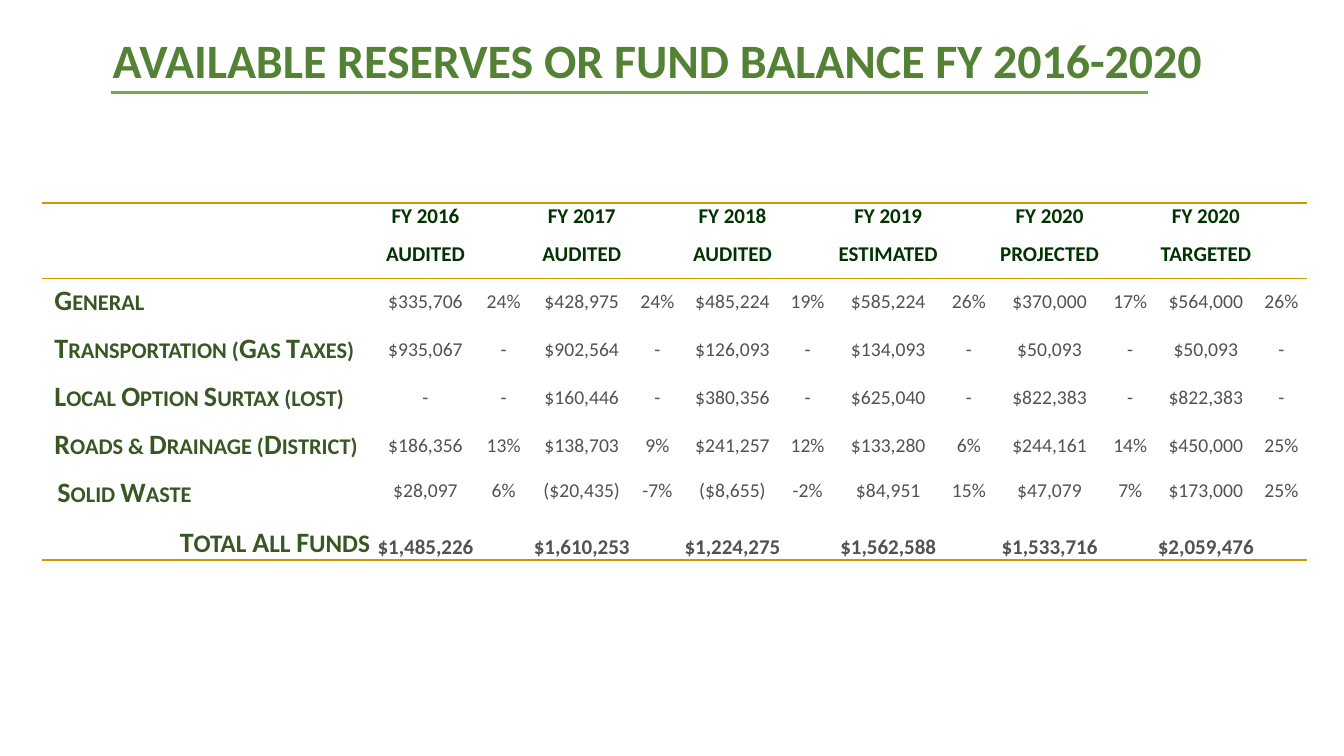
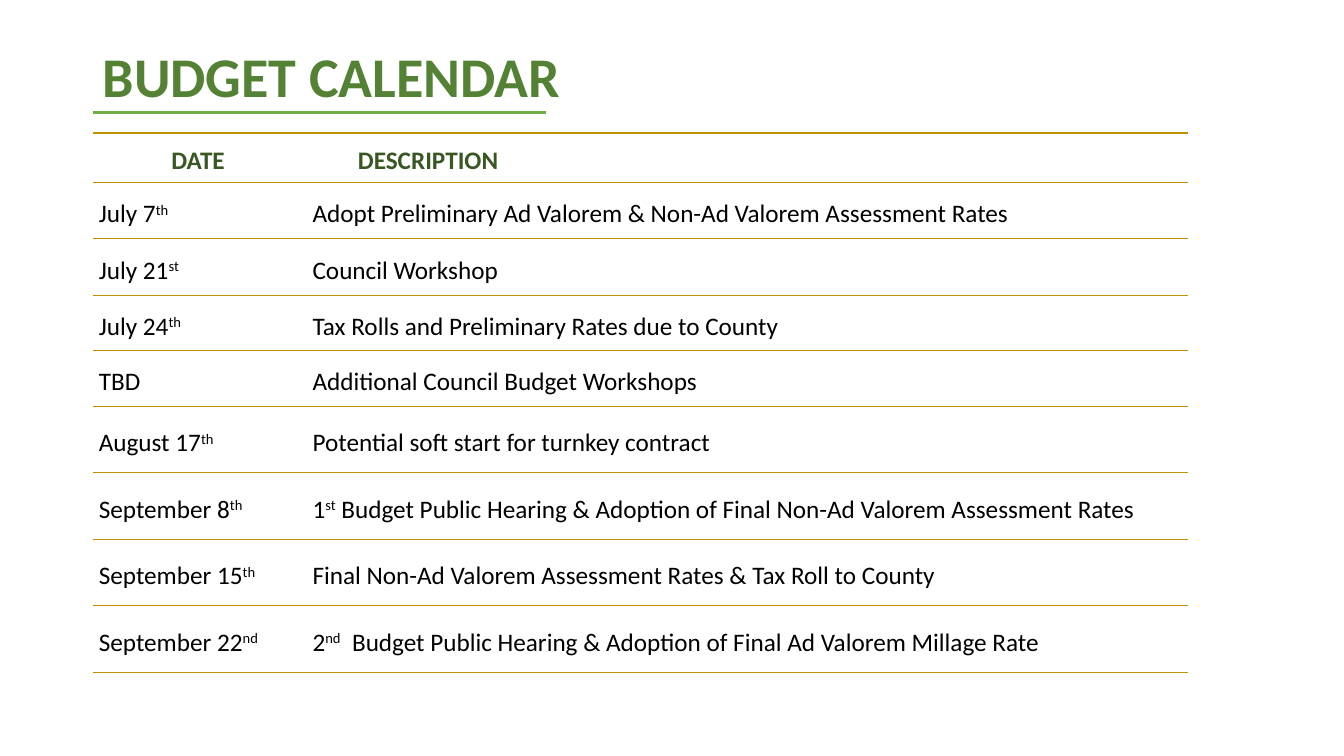
from dataclasses import dataclass
from itertools import groupby

from lxml import etree
from pptx import Presentation
from pptx.dml import color
from pptx.enum import shapes, text
from pptx.oxml import ns
from pptx.util import Inches, Pt


@dataclass(frozen=True)
class Theme:
    """Colours, type sizes and line widths of the deck."""
    font: str = "Calibri"
    title: str = "548235"
    rule: str = "70AD47"
    head: str = "003300"
    label: str = "385723"
    value: str = "525252"
    body: str = "000000"
    paper: str = "FFFFFF"
    gold: str = "CC9900"
    amber: str = "C09101"
    cap: float = 20
    mid: float = 18
    small: float = 16
    sub: float = 15
    cell: float = 14
    thick: float = 1.5
    thin: float = 1
    rule_w: float = 2


T = Theme()
LEFT, MID, RIGHT = text.PP_ALIGN.LEFT, text.PP_ALIGN.CENTER, text.PP_ALIGN.RIGHT
CENTER, BOTTOM = text.MSO_ANCHOR.MIDDLE, text.MSO_ANCHOR.BOTTOM
PLAIN = "{2D5ABB26-0587-4C30-8999-92F81FD0307C}"
TIGHT = (0.01, 0.01, 0.01, 0)

YEARS = ["FY 2016", "FY 2017", "FY 2018", "FY 2019", "FY 2020", "FY 2020"]
STAGES = ["AUDITED", "AUDITED", "AUDITED", "ESTIMATED", "PROJECTED", "TARGETED"]
FUNDS = [
    ("General", "$335,706 24% $428,975 24% $485,224 19% $585,224 26% $370,000 17% $564,000 26%"),
    ("Transportation (Gas Taxes)", "$935,067 - $902,564 - $126,093 - $134,093 - $50,093 - $50,093 -"),
    ("Local Option Surtax (lost)", "- - $160,446 - $380,356 - $625,040 - $822,383 - $822,383 -"),
    ("Roads & Drainage (District)", "$186,356 13% $138,703 9% $241,257 12% $133,280 6% $244,161 14% $450,000 25%"),
    ("Solid Waste", "$28,097 6% ($20,435) -7% ($8,655) -2% $84,951 15% $47,079 7% $173,000 25%"),
]
TOTALS = ["$1,485,226", "$1,610,253", "$1,224,275", "$1,562,588", "$1,533,716", "$2,059,476"]
FUND_COLS = [3.3, 1, 0.55, 1, 0.5, 0.99, 0.5, 1.1, 0.5, 1.1, 0.5, 1, 0.5]
FUND_ROWS = [0.26, 0.49, 0.46, 0.49, 0.46, 0.49, 0.4, 0.5]

DATES = [
    ("July 7^th", "Adopt Preliminary Ad Valorem & Non-Ad Valorem Assessment Rates"),
    ("July 21^st", "Council Workshop"),
    ("July 24^th", "Tax Rolls and Preliminary Rates due to County"),
    ("TBD", "Additional Council Budget Workshops"),
    ("August 17^th", "Potential soft start for turnkey contract"),
    ("September 8^th", "1^st^ Budget Public Hearing & Adoption of Final Non-Ad Valorem Assessment Rates"),
    ("September 15^th", "Final Non-Ad Valorem Assessment Rates & Tax Roll to County"),
    ("September 22^nd", "2^nd^  Budget Public Hearing & Adoption of Final Ad Valorem Millage Rate"),
]
DATE_COLS = [2.18, 8.68]
DATE_ROWS = [0.49, 0.56, 0.56, 0.55, 0.55] + [0.66] * 4


def ink(run, size, tint, bold=False):
    """Set the font, size, colour and weight of a run."""
    font = run.font
    font.name, font.size, font.bold = T.font, Pt(size), bold
    font.color.rgb = color.RGBColor.from_string(tint)


def title(slide, box, words, size, rule):
    """Put a title in its box, with a rule given as left, top and width."""
    frame = slide.shapes.add_textbox(*map(Inches, box)).text_frame
    frame.word_wrap = True
    frame.vertical_anchor = CENTER
    frame.text = words
    ink(frame.paragraphs[0].runs[0], size, T.title, True)
    left, top, width = rule
    line = slide.shapes.add_connector(
        shapes.MSO_CONNECTOR.STRAIGHT,
        Inches(left), Inches(top), Inches(left + width), Inches(top))
    line.line.color.rgb = color.RGBColor.from_string(T.rule)
    line.line.width = Pt(T.rule_w)
    etree.SubElement(line._element.spPr, ns.qn("a:effectLst"))


def grid(slide, left, top, cols, rows):
    """Add an unstyled table with the given column widths and row heights."""
    frame = slide.shapes.add_table(
        len(rows), len(cols), Inches(left), Inches(top),
        Inches(sum(cols)), Inches(sum(rows)))
    table = frame.table
    table.first_row = table.horz_banding = False
    table._tbl.tblPr.find(ns.qn("a:tableStyleId")).text = PLAIN
    for col, width in zip(table.columns, cols):
        col.width = Inches(width)
    for row, height in zip(table.rows, rows):
        row.height = Inches(height)
    return table


def edge(cell, side, tint, width):
    """Draw the top (T) or bottom (B) border of a cell."""
    props = cell._tc.get_or_add_tcPr()
    line = etree.SubElement(props, ns.qn("a:ln" + side), w=str(Pt(width)))
    fill = etree.SubElement(line, ns.qn("a:solidFill"))
    etree.SubElement(fill, ns.qn("a:srgbClr"), val=tint)


def lay(cell, pads, align=LEFT, anchor=CENTER, gap=None):
    """Set the margins and alignment of a cell and return its paragraph."""
    cell.margin_left, cell.margin_top, cell.margin_right, cell.margin_bottom = map(Inches, pads)
    cell.vertical_anchor = anchor
    para = cell.text_frame.paragraphs[0]
    para.alignment = align
    if gap:
        para.line_spacing = gap
    return para


def fill(cell, words, size, tint, bold=False, anchor=CENTER):
    """Write centred text in a tight cell."""
    para = lay(cell, TIGHT, MID, anchor)
    if words:
        para.text = words
        ink(para.runs[0], size, tint, bold)
    else:
        etree.SubElement(para._p, ns.qn("a:endParaRPr"), sz=str(int(T.cell * 100)))


def caps(para, words, small):
    """Write a label in small capitals, with its capitals larger."""
    for big, part in groupby(words, str.isupper):
        run = para.add_run()
        run.text = "".join(part).upper()
        ink(run, T.cap if big else small, T.label, True)


def raised(para, words):
    """Write body text in which every part after an odd caret is raised."""
    for spot, part in enumerate(words.split("^")):
        if part:
            run = para.add_run()
            run.text = part
            ink(run, T.mid, T.body)
            if spot % 2:
                run._r.get_or_add_rPr().set("baseline", "30000")


def funds(slide, left, top):
    """Build the table of reserves by fund and year."""
    table = grid(slide, left, top, FUND_COLS, FUND_ROWS)
    last = len(FUND_ROWS) - 1
    for col in range(len(FUND_COLS)):
        for row, side, width in ((0, "T", T.thick), (1, "B", T.thin), (last, "B", T.thick)):
            edge(table.cell(row, col), side, T.gold, width)
        if col % 2 == 0:
            for row in (0, 1):
                fill(table.cell(row, col), "", T.sub, T.head)
            edge(table.cell(0, col), "B", T.gold, T.thin)
            table.cell(0, col).merge(table.cell(1, col))
            if col:
                fill(table.cell(last, col), "", T.sub, T.value)
    for spot, (year, stage, total) in enumerate(zip(YEARS, STAGES, TOTALS)):
        col = 2 * spot + 1
        fill(table.cell(0, col), year, T.sub, T.head, True)
        fill(table.cell(1, col), stage, T.sub, T.head, True)
        fill(table.cell(last, col), total, T.sub, T.value, True, BOTTOM)
    for row, (name, values) in enumerate(FUNDS, 2):
        pads = (0.15, 0.06, 0.05, 0) if row == last - 1 else (0.12, 0.06, 0.12, 0.06)
        caps(lay(table.cell(row, 0), pads), name, T.small)
        for col, value in enumerate(values.split(), 1):
            fill(table.cell(row, col), value, T.cell, T.value)
    para = lay(table.cell(last, 0), (0.02, 0.06, 0.05, 0), RIGHT, BOTTOM, 1.15)
    caps(para, "Total All Funds", T.mid)


def dates(slide, left, top):
    """Build the calendar table of dates and descriptions."""
    table = grid(slide, left, top, DATE_COLS, DATE_ROWS)
    heads = (("DATE", MID, 0), ("DESCRIPTION", LEFT, 0.45))
    for col, (head, align, inset) in enumerate(heads):
        para = lay(table.cell(0, col), (inset, 0.05, 0.09, 0), align, gap=1.07)
        para.text = head
        ink(para.runs[0], T.mid, T.label, True)
        edge(table.cell(0, col), "T", T.amber, T.thin)
        for row, entry in enumerate(DATES, 1):
            inset = 0 if col else 0.06
            raised(lay(table.cell(row, col), (inset, 0.05, 0.09, 0), gap=1.07), entry[col])
    for cell in table.iter_cells():
        edge(cell, "B", T.amber, T.thin)
        cell.fill.solid()
        cell.fill.fore_color.rgb = color.RGBColor.from_string(T.paper)


def main():
    """Build both slides and save the deck."""
    deck = Presentation()
    deck.slide_width, deck.slide_height = Inches(13.33), Inches(7.5)
    blank = deck.slide_layouts[6]

    slide = deck.slides.add_slide(blank)
    title(slide, (1.02, 0.24, 11.5, 0.7), "AVAILABLE RESERVES OR FUND BALANCE FY 2016-2020",
          34.2, (1.1, 0.92, 10.29))
    funds(slide, 0.42, 2.01)

    slide = deck.slides.add_slide(blank)
    title(slide, (0.92, 0.35, 11.5, 0.8), "BUDGET CALENDAR", 40, (0.92, 1.12, 4.5))
    dates(slide, 0.92, 1.32)
    deck.save("out.pptx")


if __name__ == "__main__":
    main()
